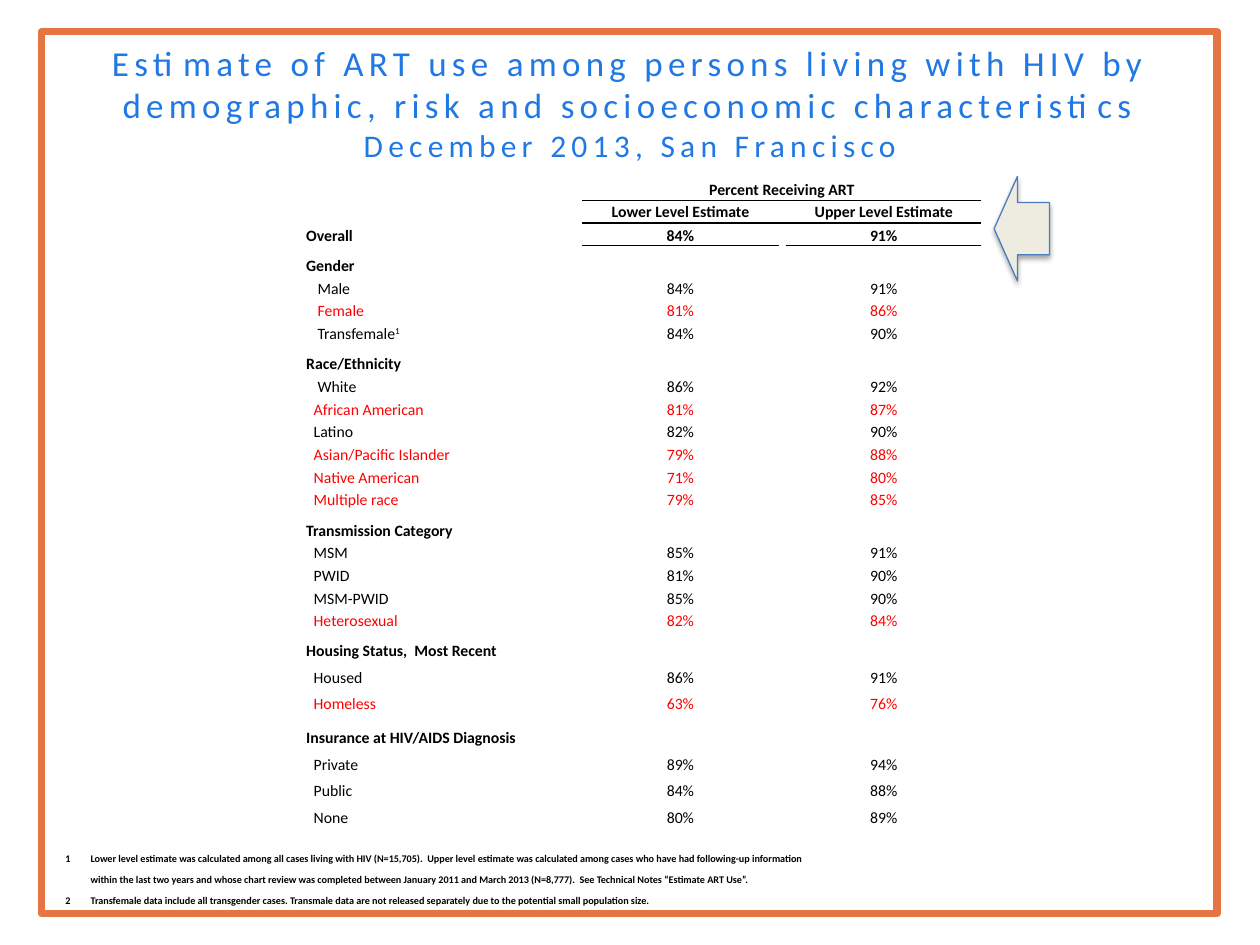
from lxml import etree
from pptx import Presentation
from pptx.dml.color import RGBColor
from pptx.enum.shapes import MSO_SHAPE
from pptx.enum.text import MSO_ANCHOR, PP_ALIGN
from pptx.oxml import parse_xml
from pptx.oxml.ns import nsdecls, qn
from pptx.util import Inches, Pt

RECTANGLE, ARROW = MSO_SHAPE.RECTANGLE, MSO_SHAPE.RIGHT_ARROW
MIDDLE, BOTTOM = MSO_ANCHOR.MIDDLE, MSO_ANCHOR.BOTTOM
LEFT, CENTER = PP_ALIGN.LEFT, PP_ALIGN.CENTER

BLACK = RGBColor(0x00, 0x00, 0x00)
RED = RGBColor(0xFF, 0x00, 0x00)
BLUE = RGBColor(0x1F, 0x78, 0xE3)
ORANGE = RGBColor(0xE5, 0x75, 0x43)
CREAM = RGBColor(0xEE, 0xEC, 0xE1)
STEEL = RGBColor(0x4B, 0x7E, 0xBC)

FONT = "Calibri"
NO_STYLE = "{2D5ABB26-0587-4C30-8999-92F81FD0307C}"
COLUMNS = (2.2, 1.56, 0.04, 1.55)
LOWER, GAP, UPPER = 1, 2, 3
HEAD, ROW, TALL, SPACER = 0.17, 0.18, 0.21, 0.06
INDENT, DEEP = 0.07, 0.1

# Heading, heading height, row height, rows of (label, lower, upper, indent, colour)
GROUPS = [
    ("Gender", ROW, ROW, [
        ("Male", 84, 91, DEEP, BLACK),
        ("Female", 81, 86, DEEP, RED),
        ("Transfemale", 84, 90, DEEP, BLACK)]),
    ("Race/Ethnicity", ROW, ROW, [
        ("White", 86, 92, DEEP, BLACK),
        ("African American", 81, 87, INDENT, RED),
        ("Latino", 82, 90, INDENT, BLACK),
        ("Asian/Pacific Islander", 79, 88, INDENT, RED),
        ("Native American", 71, 80, INDENT, RED),
        ("Multiple race", 79, 85, INDENT, RED)]),
    ("Transmission Category", ROW, ROW, [
        ("MSM", 85, 91, INDENT, BLACK),
        ("PWID", 81, 90, INDENT, BLACK),
        ("MSM-PWID", 85, 90, INDENT, BLACK),
        ("Heterosexual", 82, 84, INDENT, RED)]),
    ("Housing Status,  Most Recent", ROW, TALL, [
        ("Housed", 86, 91, INDENT, BLACK),
        ("Homeless", 63, 76, INDENT, RED)]),
    ("Insurance at HIV/AIDS Diagnosis", TALL, TALL, [
        ("Private", 89, 94, INDENT, BLACK),
        ("Public", 84, 88, INDENT, BLACK),
        ("None", 80, 89, INDENT, BLACK)]),
]

FOOTNOTES = [
    "1\tLower level estimate was calculated among all cases living with HIV (N=15,705).  "
    "Upper level estimate was calculated among cases who have had following-up information\v"
    "within the last two years and whose chart review was completed between January 2011 "
    "and March 2013 (N=8,777).  See Technical Notes “Estimate ART Use”.",
    "2\tTransfemale data include all transgender cases. Transmale data are not released "
    "separately due to the potential small population size.",
]


def inches(*lengths):
    return [Inches(length) for length in lengths]


def format_span(span, size, color=BLACK, bold=False, **attributes):
    span.font.name, span.font.size = FONT, Pt(size)
    span.font.bold, span.font.color.rgb = bold, color
    for name, value in attributes.items():
        span.font._element.set(name, str(value))


def add_title(page):
    title = page.shapes.title
    title.left, title.top, title.width, title.height = inches(0.5, 0.29, 9, 1.05)
    frame = title.text_frame
    frame.vertical_anchor = MIDDLE
    frame.text = ("Estimate of ART use among persons living with HIV by demographic, "
                  "risk and socioeconomic characteristics\vDecember 2013, San Francisco")
    para = frame.paragraphs[0]
    para.alignment = CENTER
    for span, size in zip(para.runs, (20, 18)):
        format_span(span, size, BLUE, spc=300)


def add_border(page):
    border = page.shapes.add_shape(RECTANGLE, *inches(0.33, 0.25, 9.33, 7))
    border.shadow.inherit = False
    border.fill.background()
    border.line.color.rgb, border.line.width = ORANGE, Pt(4.25)
    page.shapes._spTree.insert(2, border._element)  # behind the title


def add_arrow(page):
    arrow = page.shapes.add_shape(ARROW, *inches(7.89, 1.4, 0.44, 0.83))
    arrow.rotation = 180
    arrow.adjustments[0], arrow.adjustments[1] = 0.5, 0.42
    arrow.fill.solid()
    arrow.fill.fore_color.rgb = CREAM
    arrow.line.color.rgb, arrow.line.width = STEEL, Pt(0.75)
    arrow.shadow.inherit = False
    effects = arrow._element.spPr.find(qn("a:effectLst"))
    effects.append(parse_xml(
        f'<a:outerShdw {nsdecls("a")} blurRad="{Pt(3.1)}" dist="{Pt(1.8)}" dir="5400000" '
        'rotWithShape="0"><a:srgbClr val="000000"><a:alpha val="35000"/></a:srgbClr>'
        '</a:outerShdw>'))


def add_footnotes(page):
    box = page.shapes.add_textbox(*inches(0.42, 6.7, 9.01, 0.55))
    frame = box.text_frame
    frame.word_wrap = True
    for number, note in enumerate(FOOTNOTES):
        para = frame.add_paragraph() if number else frame.paragraphs[0]
        para.text = note
        properties = para._p.get_or_add_pPr()
        properties.set("marL", str(Inches(0.2)))
        properties.set("indent", str(-Inches(0.2)))
        tabs = etree.SubElement(properties, qn("a:tabLst"))
        for stop in (0, 0.2):
            etree.SubElement(tabs, qn("a:tab"), pos=str(Inches(stop)), algn="l")
        for span in para.runs:
            format_span(span, 10, bold=True, baseline=30000)


def write_cell(cell, text, color=BLACK, bold=False, align=CENTER, anchor=BOTTOM, indent=0.01):
    cell.vertical_anchor = anchor
    cell.margin_left = Inches(indent)
    para = cell.text_frame.paragraphs[0]
    para.text, para.alignment = text, align
    format_span(para.runs[0], 9, color, bold)


def rule_cell(cell, *sides):
    properties = cell._tc.get_or_add_tcPr()
    for position, side in enumerate(sides):
        properties.insert(position, parse_xml(
            f'<a:{side} {nsdecls("a")} w="{Pt(1)}"><a:solidFill><a:srgbClr val="000000"/>'
            f'</a:solidFill></a:{side}>'))


def write_row(table, row, label, lower, upper, indent=0.01, color=BLACK, bold=False):
    write_cell(table.cell(row, 0), label, color, bold, LEFT, indent=indent)
    for column, value in ((LOWER, lower), (UPPER, upper)):
        write_cell(table.cell(row, column), f"{value}%", color, bold)


def write_header(table):
    table.cell(0, LOWER).merge(table.cell(0, UPPER))
    write_cell(table.cell(0, LOWER), "Percent Receiving ART", bold=True, anchor=MIDDLE)
    for column, level in ((LOWER, "Lower"), (UPPER, "Upper")):
        write_cell(table.cell(1, column), f"{level} Level Estimate", bold=True, anchor=MIDDLE)
        rule_cell(table.cell(1, column), "lnT", "lnB")
        rule_cell(table.cell(2, column), "lnT")
    for column in (LOWER, GAP, UPPER):
        rule_cell(table.cell(0, column), "lnB")
    rule_cell(table.cell(1, GAP), "lnT")


def add_estimates(page):
    heights = [HEAD, ROW, ROW]
    for _, heading_height, row_height, rows in GROUPS:
        heights += [SPACER, heading_height] + [row_height] * len(rows)
    holder = page.shapes.add_table(len(heights), len(COLUMNS),
                                   *inches(2.42, 1.42, sum(COLUMNS), sum(heights)))
    table = holder.table
    table.first_row = table.horz_banding = False
    table._tbl.tblPr.find(qn("a:tableStyleId")).text = NO_STYLE
    for column, width in zip(table.columns, COLUMNS):
        column.width = Inches(width)
    for row, height in zip(table.rows, heights):
        row.height = Inches(height)
    # Tiny type in empty cells lets the spacer rows stay low
    for cell in table.iter_cells():
        cell.fill.background()
        cell.margin_left = cell.margin_right = cell.margin_top = Inches(0.01)
        cell.margin_bottom = 0
        cell.text_frame.paragraphs[0]._p.get_or_add_endParaRPr().set("sz", "100")

    write_header(table)
    write_row(table, 2, "Overall", 84, 91, bold=True)
    row = 4
    for heading, _, _, rows in GROUPS:
        write_cell(table.cell(row, 0), heading, bold=True, align=LEFT)
        if heading.startswith("Insurance"):
            table.cell(row, 0).merge(table.cell(row, LOWER))
        for offset, entry in enumerate(rows, 1):
            write_row(table, row + offset, *entry)
            if entry[0] == "Transfemale":
                mark = table.cell(row + offset, 0).text_frame.paragraphs[0].add_run()
                mark.text = "1"
                format_span(mark, 9, baseline=30000)
        row += len(rows) + 2


def main():
    deck = Presentation()
    deck.slide_width, deck.slide_height = inches(10, 7.5)
    page = deck.slides.add_slide(deck.slide_layouts[5])
    add_border(page)
    add_title(page)
    add_footnotes(page)
    add_arrow(page)
    add_estimates(page)
    deck.save("out.pptx")


if __name__ == "__main__":
    main()
